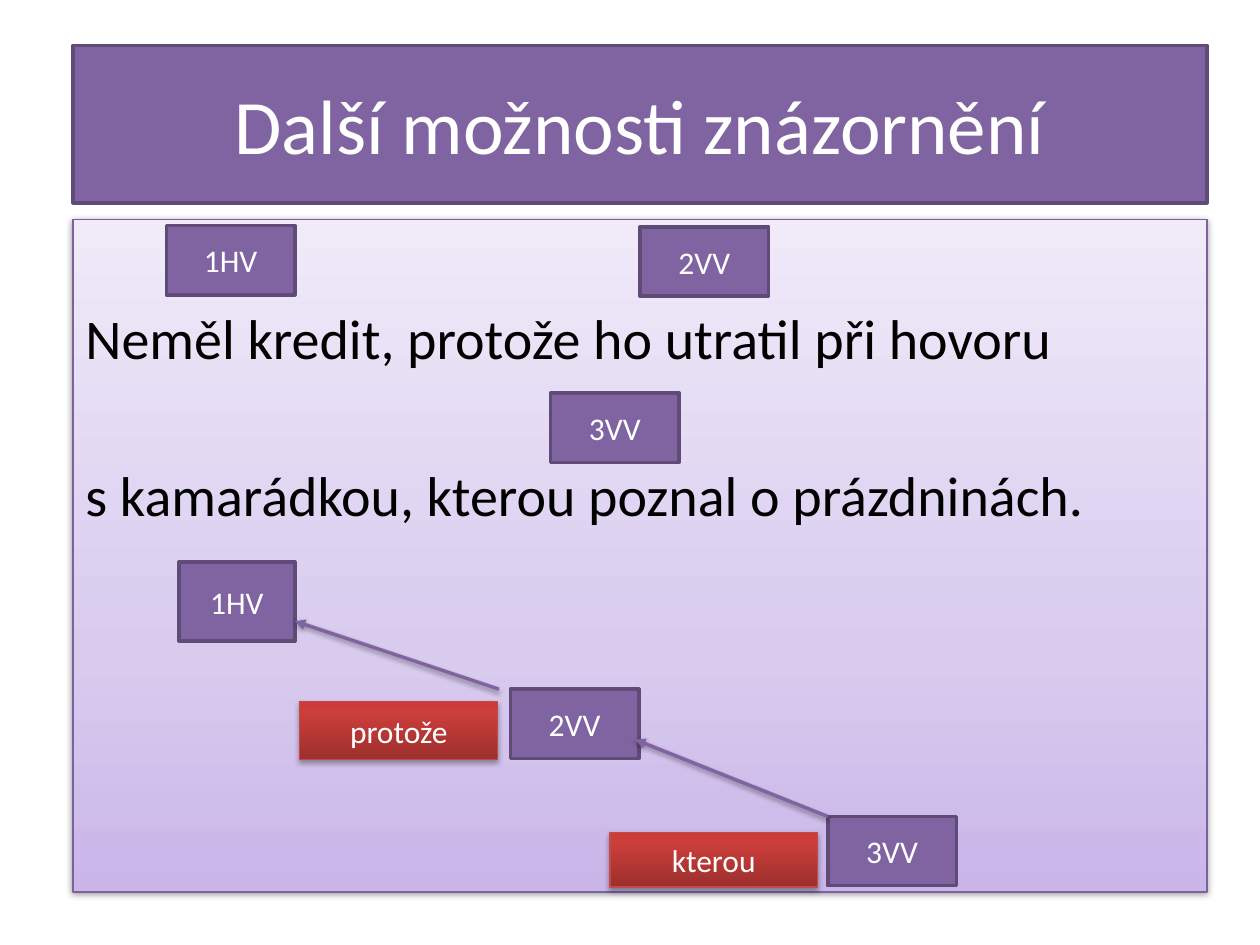
from lxml import etree
from pptx import Presentation
from pptx.dml.color import RGBColor
from pptx.enum.shapes import MSO_CONNECTOR as CONN, MSO_SHAPE as SHAPE
from pptx.enum.text import MSO_ANCHOR as ANCHOR, PP_ALIGN as ALIGN
from pptx.oxml import parse_xml
from pptx.oxml.ns import nsdecls, qn
from pptx.util import Inches, Pt

# Grid of 100 columns by 75 rows; boxes are (column, row, columns, rows)
SLIDE_W, SLIDE_H = Inches(10), Inches(7.5)
COL, ROW = SLIDE_W / 100, SLIDE_H / 75
TITLE_BOX = (5.8, 3.6, 90, 12.5)
PANEL_BOX = (5.8, 17.4, 90, 53.4)
DIAGRAM_BOX = (14.2, 44.6, 60.7, 25.8)
LABEL_SIZE = (10.2, 5.5)

COLORS = {"purple": "8064A2", "purple_edge": "5F4A78", "panel_edge": "7D60A0",
          "red_edge": "BF4C48", "white": "FFFFFF", "black": "000000"}
# Gradient stops run from the bottom edge to the top edge
PANEL_STOPS = {0: "C9B5E8", 35: "D8CBEE", 100: "F0EAF9"}
RED_STOPS = {0: "9C2F2D", 80: "CB3E3A", 100: "CE3B37"}


def rgb(name):
    return RGBColor.from_string(COLORS[name])


def set_effects(sp, alpha=None, dist=1.6):
    """Give a soft shadow below, or no shadow when alpha is None."""
    sp_pr = sp._element.spPr
    for old in sp_pr.findall(qn("a:effectLst")):
        sp_pr.remove(old)
    effects = etree.SubElement(sp_pr, qn("a:effectLst"))
    if alpha:
        effects.append(parse_xml(
            f'<a:outerShdw {nsdecls("a")} blurRad="{Pt(3.1)}" dist="{Pt(dist)}" '
            f'dir="5400000" rotWithShape="0"><a:srgbClr val="{COLORS["black"]}">'
            f'<a:alpha val="{alpha * 1000}"/></a:srgbClr></a:outerShdw>'))


def set_gradient(sp, stops):
    sp.fill.background()
    gs = "".join(f'<a:gs pos="{pos * 1000}"><a:srgbClr val="{color}"/></a:gs>'
                 for pos, color in stops.items())
    no_fill = sp._element.spPr.find(qn("a:noFill"))
    no_fill.getparent().replace(no_fill, parse_xml(
        f'<a:gradFill {nsdecls("a")} rotWithShape="1"><a:gsLst>{gs}</a:gsLst>'
        f'<a:lin ang="16200000" scaled="0"/></a:gradFill>'))


def add_rect(s, box, edge="purple_edge", width=2, stops=None):
    x, y, w, h = box
    sp = s.shapes.add_shape(SHAPE.RECTANGLE, int(x * COL), int(y * ROW),
                            int(w * COL), int(h * ROW))
    if stops:
        set_gradient(sp, stops)
    else:
        sp.fill.solid()
        sp.fill.fore_color.rgb = rgb("purple")
    sp.line.color.rgb = rgb(edge)
    sp.line.width = Pt(width)
    set_effects(sp)
    return sp


def write(sp, lines, size=18, color="white", align=ALIGN.CENTER, gap=0, **frame):
    tf = sp.text_frame
    settings = {"word_wrap": True, "vertical_anchor": ANCHOR.MIDDLE, **frame}
    for name, value in settings.items():
        setattr(tf, name, value)
    for i, line in enumerate(lines):
        p = tf.add_paragraph() if i else tf.paragraphs[0]
        p.alignment = align
        p.space_before = Pt(gap if i else 0)
        r = p.add_run()
        r.text = line
        for name, value in {"name": "Calibri", "size": Pt(size)}.items():
            setattr(r.font, name, value)
        r.font.color.rgb = rgb(color)


def add_clause(s, text, x, y, size=LABEL_SIZE):
    write(add_rect(s, (x, y, *size)), [text])


def add_conjunction(s, text, x, y, size):
    sp = add_rect(s, (x, y, *size), "red_edge", 0.75, RED_STOPS)
    set_effects(sp, 35, 1.8)
    write(sp, [text])


def add_arrow(s, x1, y1, x2, y2):
    line = s.shapes.add_connector(CONN.STRAIGHT, int(x1 * COL), int(y1 * ROW),
                                  int(x2 * COL), int(y2 * ROW))
    line.line.color.rgb = rgb("purple")
    line.line.width = Pt(2)
    etree.SubElement(line.line._get_or_add_ln(), qn("a:tailEnd"), type="triangle")
    set_effects(line, 38)


def build_title(s, box):
    write(add_rect(s, box), ["Další možnosti znázornění"], size=44)


def build_sentence(s, box):
    """Panel with the sentence and a clause label above each clause."""
    panel = add_rect(s, box, "panel_edge", 0.75, PANEL_STOPS)
    set_effects(panel, 38)
    write(panel, ["Neměl kredit, protože ho utratil při hovoru",
                  "s kamarádkou, kterou poznal o prázdninách."],
          size=32, color="black", align=ALIGN.LEFT, gap=51,
          vertical_anchor=ANCHOR.TOP, margin_top=Inches(0.67))
    x, y = box[:2]
    for text, dx, dy in [("1HV", 7.4, 0.5), ("2VV", 45, 0.6), ("3VV", 37.9, 13.8)]:
        add_clause(s, text, x + dx, y + dy)


def build_diagram(s, box):
    """Clauses stepping down, each pointing back to the one it depends on."""
    x, y = box[:2]
    for text, dx, dy, size in [("1HV", 0, 0, (9.2, 6.3)),
                               ("2VV", 26.3, 10.1, LABEL_SIZE),
                               ("3VV", 51.5, 20.2, LABEL_SIZE)]:
        add_clause(s, text, x + dx, y + dy, size)
    for text, dx, dy, size in [("protože", 9.6, 11.1, (15.7, 4.6)),
                               ("kterou", 34.2, 21.5, (16.5, 4.3))]:
        add_conjunction(s, text, x + dx, y + dy, size)
    for x1, y1, x2, y2 in [(25.4, 10.1, 9.2, 4.7), (51.5, 20.2, 36.2, 14.1)]:
        add_arrow(s, x + x1, y + y1, x + x2, y + y2)


def main():
    prs = Presentation()
    prs.slide_width, prs.slide_height = SLIDE_W, SLIDE_H
    s = prs.slides.add_slide(prs.slide_layouts[6])
    build_title(s, TITLE_BOX)
    build_sentence(s, PANEL_BOX)
    build_diagram(s, DIAGRAM_BOX)
    prs.save("out.pptx")


if __name__ == "__main__":
    main()
